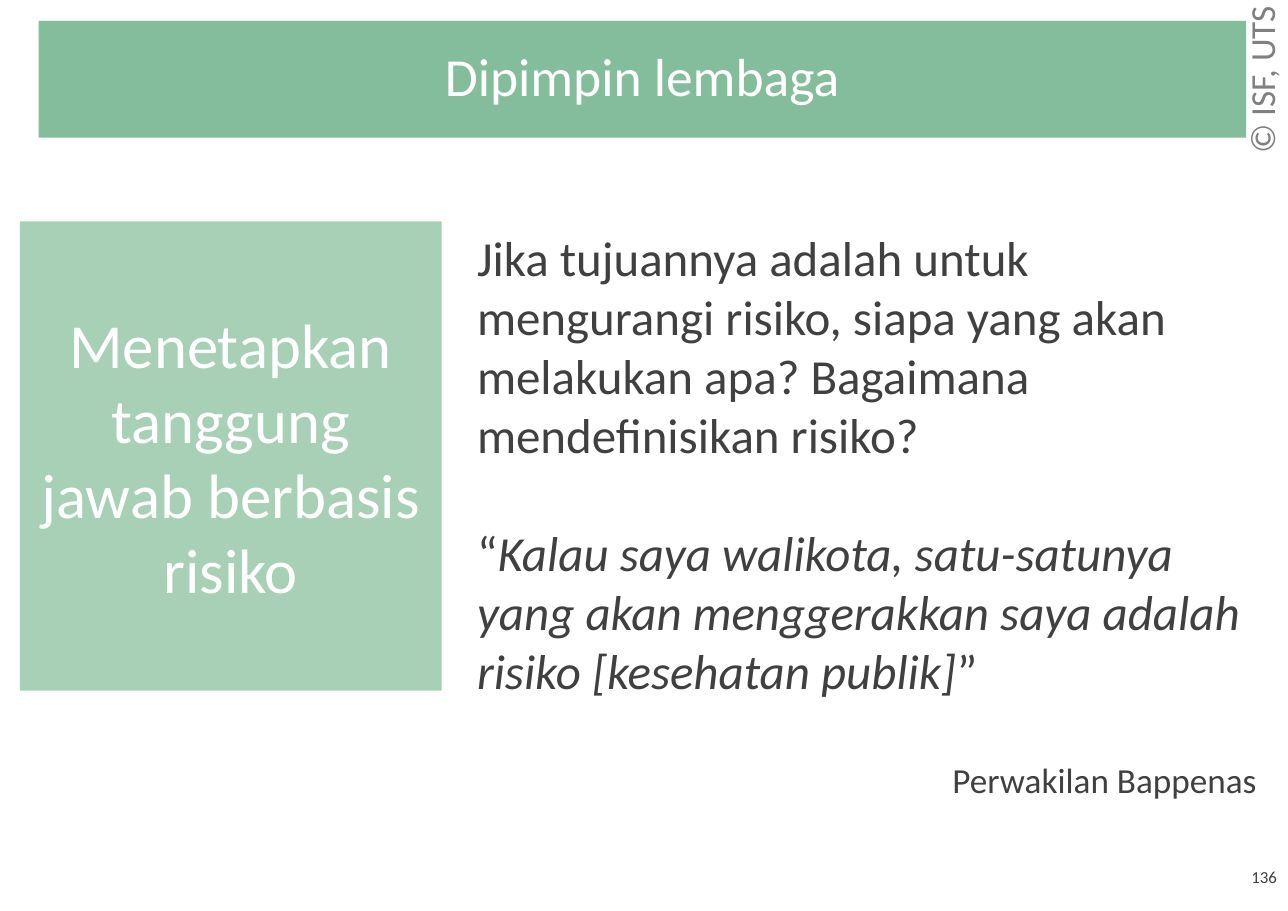
from lxml.etree import SubElement
from pptx import Presentation
from pptx.dml.color import RGBColor
from pptx.enum.shapes import MSO_SHAPE
from pptx.enum.text import MSO_ANCHOR, MSO_AUTO_SIZE, PP_ALIGN
from pptx.oxml.ns import qn
from pptx.util import Inches, Pt

GREEN = RGBColor(0x50, 0xA2, 0x71)
WHITE = RGBColor(0xFF, 0xFF, 0xFF)
DARK_GRAY = RGBColor(0x40, 0x40, 0x40)
MID_GRAY = RGBColor(0x80, 0x80, 0x80)
BLANK_LINE = Pt(39)


def fill_green(shape, opacity):
    shape.fill.solid()
    shape.fill.fore_color.rgb = GREEN
    color = shape.fill._xPr.find(qn("a:solidFill"))[0]
    SubElement(color, qn("a:alpha")).set("val", str(opacity * 1000))


def format_text(shape, size, color, alignment, anchor, margins=(0.11, 0.06)):
    frame = shape.text_frame
    frame.word_wrap = True
    frame.auto_size = MSO_AUTO_SIZE.NONE
    frame.vertical_anchor = anchor
    frame.margin_left = frame.margin_right = Inches(margins[0])
    frame.margin_top = frame.margin_bottom = Inches(margins[1])
    for paragraph in frame.paragraphs:
        paragraph.alignment = alignment
        for run in paragraph.runs:
            run.font.name = "Calibri"
            run.font.size = Pt(size)
            run.font.color.rgb = color


presentation = Presentation()
presentation.slide_width = Inches(11.69)
presentation.slide_height = Inches(8.27)
slide = presentation.slides.add_slide(presentation.slide_layouts[5])

title = slide.shapes.title
title.left, title.top = Inches(0.35), Inches(0.19)
title.width, title.height = Inches(10.96), Inches(1.06)
title.text_frame.text = "Dipimpin lembaga"
format_text(title, 35, WHITE, PP_ALIGN.CENTER, MSO_ANCHOR.MIDDLE, (0.13, 0.13))
title.text_frame.paragraphs[0].line_spacing = 0.9
fill_green(title, 70)

copyright_line = slide.shapes.add_textbox(Inches(10.65), Inches(0.49), Inches(1.59), Inches(0.5))
copyright_line.rotation = 270
copyright_line.text_frame.text = "© ISF, UTS"
format_text(copyright_line, 23, MID_GRAY, PP_ALIGN.RIGHT, MSO_ANCHOR.TOP)
copyright_line.text_frame.word_wrap = False

topic = slide.shapes.add_shape(
    MSO_SHAPE.RECTANGLE, Inches(0.18), Inches(2.01), Inches(3.83), Inches(4.26)
)
topic.shadow.inherit = False
topic.line.fill.background()
fill_green(topic, 50)
topic.text_frame.text = "Menetapkan tanggung jawab berbasis risiko"
format_text(topic, 41, WHITE, PP_ALIGN.CENTER, MSO_ANCHOR.MIDDLE)

body = slide.shapes.add_textbox(Inches(4.22), Inches(2.01), Inches(7.3), Inches(5.35))
body.text_frame.text = (
    "Jika tujuannya adalah untuk mengurangi risiko, siapa yang akan "
    "melakukan apa? Bagaimana mendefinisikan risiko?"
)
quote = body.text_frame.add_paragraph()
quote_parts = [
    ("“", False),
    ("Kalau saya walikota, satu-satunya yang akan menggerakkan saya adalah "
     "risiko [kesehatan publik]", True),
    ("”", False),
]
for text, italic in quote_parts:
    run = quote.add_run()
    run.text = text
    run.font.italic = italic
speaker = body.text_frame.add_paragraph()
speaker.text = "Perwakilan Bappenas"
format_text(body, 32, DARK_GRAY, PP_ALIGN.LEFT, MSO_ANCHOR.TOP)
quote.space_before = speaker.space_before = BLANK_LINE
speaker.alignment = PP_ALIGN.RIGHT
speaker.runs[0].font.size = Pt(23)

page_number = slide.shapes.add_textbox(Inches(10.94), Inches(7.66), Inches(0.76), Inches(0.6))
page_number.text_frame.text = "136"
format_text(page_number, 11, DARK_GRAY, PP_ALIGN.RIGHT, MSO_ANCHOR.MIDDLE)

presentation.save("out.pptx")
